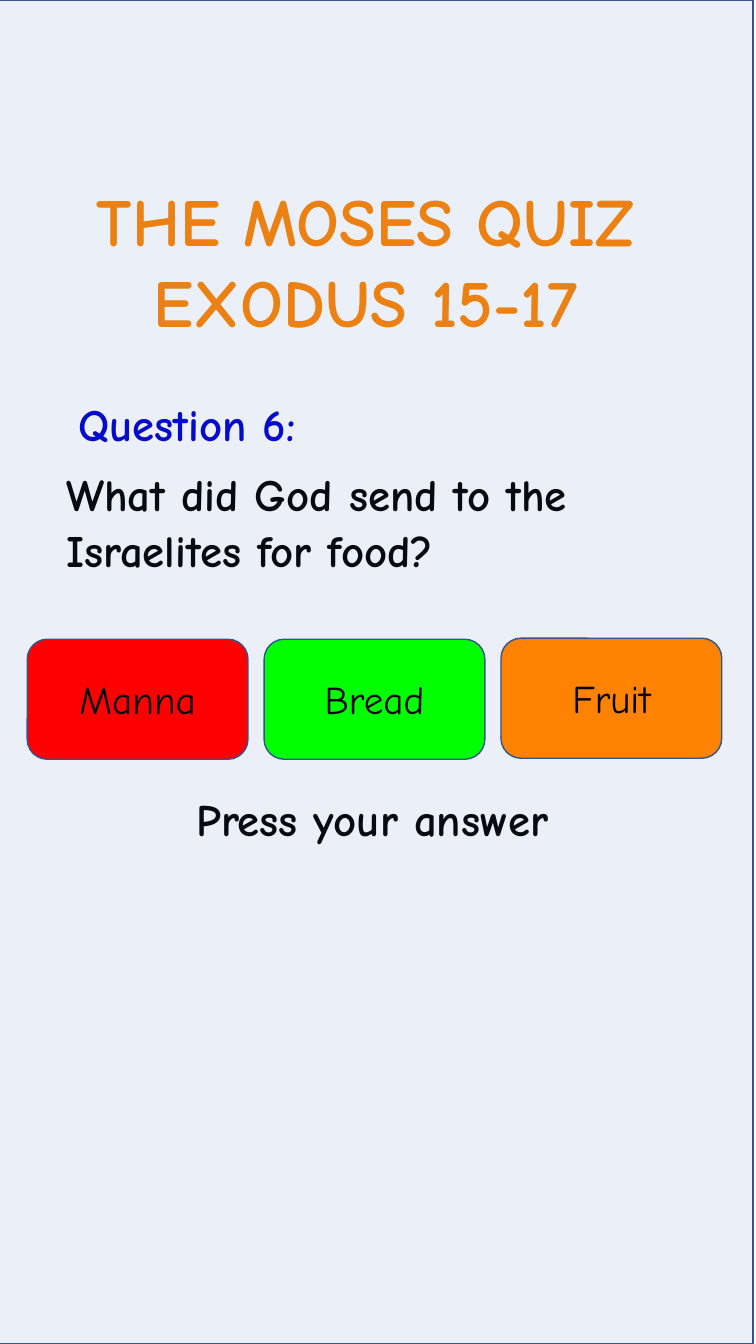
from lxml import etree
from pptx import Presentation
from pptx.dml.color import RGBColor
from pptx.enum.shapes import MSO_SHAPE as SHAPE
from pptx.enum.text import MSO_ANCHOR as ANCHOR, MSO_AUTO_SIZE as AUTO, PP_ALIGN as ALIGN
from pptx.oxml.ns import qn
from pptx.util import Pt

PX = 9144  # 100 px to the inch
FONT = "Comic Neue"
ORANGE = RGBColor(0xFF, 0x82, 0x00)
RED = RGBColor(0xFF, 0x00, 0x00)
GREEN = RGBColor(0x00, 0xFF, 0x00)
BLUE = RGBColor(0x00, 0x00, 0xCC)
BLACK = RGBColor(0x00, 0x00, 0x00)
TINT = RGBColor(0x44, 0x72, 0xC4)
BORDER = RGBColor(0x32, 0x54, 0x91)


def px(*lengths):
    return [n * PX for n in lengths]


def set_text(sp, text, size, color, bold=True, align=ALIGN.LEFT):
    tf = sp.text_frame
    tf.text = text
    for p in tf.paragraphs:
        p.alignment = align
        for r in p.runs:
            r.font.name = FONT
            r.font.size = Pt(size)
            r.font.bold = bold
            r.font.color.rgb = color
    return tf


def fit_unwrapped(tf):
    tf.word_wrap = False
    tf.auto_size = AUTO.SHAPE_TO_FIT_TEXT
    tf.vertical_anchor = ANCHOR.TOP


def add_title(slide, text, box):
    sp = slide.shapes.title
    sp.left, sp.top, sp.width, sp.height = px(*box)
    fit_unwrapped(set_text(sp, text, 48, ORANGE, align=ALIGN.CENTER))


def add_label(slide, text, box):
    sp = slide.shapes.add_textbox(*px(*box))
    fit_unwrapped(set_text(sp, text, 32, BLUE, align=ALIGN.CENTER))


def add_body(slide, text, box, line_spacing):
    sp = slide.shapes.add_textbox(*px(*box))
    tf = set_text(sp, text, 32, BLACK)
    tf.word_wrap = True
    p = tf.paragraphs[0]
    p.line_spacing = line_spacing
    p.space_before = Pt(7.5)


def add_panel(slide, kind, box, fill):
    sp = slide.shapes.add_shape(kind, *px(*box))
    sp.shadow.inherit = False
    sp.fill.solid()
    sp.fill.fore_color.rgb = fill
    sp.line.color.rgb = BORDER
    sp.line.width = Pt(1)
    return sp


def add_tint(slide, box):
    """Cover the slide with a bordered panel at 10% opacity."""
    sp = add_panel(slide, SHAPE.RECTANGLE, box, TINT)
    color = sp.fill._xPr.find(qn("a:solidFill"))[0]
    etree.SubElement(color, qn("a:alpha")).set("val", "10000")


def add_answer(slide, text, box, fill):
    sp = add_panel(slide, SHAPE.ROUNDED_RECTANGLE, box, fill)
    tf = set_text(sp, text, 28, BLACK, bold=False, align=ALIGN.CENTER)
    tf.vertical_anchor = ANCHOR.MIDDLE


def main():
    prs = Presentation()
    prs.slide_width, prs.slide_height = px(750, 1333)
    slide = prs.slides.add_slide(prs.slide_layouts[5])

    add_title(slide, "THE MOSES QUIZ \nEXODUS 15-17 ", (30, 173, 689, 172))
    add_label(slide, "Question 6:", (47, 389, 277, 64))
    add_body(slide, "What did God send to the Israelites for food?",
             (56, 456, 660, 146), Pt(40))
    add_body(slide, "Press your answer", (185, 786, 422, 72), 0.9)
    add_tint(slide, (-3, 0, 750, 1333))

    answers = [("Manna", RED, 634), ("Bread", GREEN, 634), ("Fruit", ORANGE, 633)]
    for i, (text, fill, top) in enumerate(answers):
        add_answer(slide, text, (27 + 235 * i, top, 219, 119), fill)

    prs.save("out.pptx")


if __name__ == "__main__":
    main()
